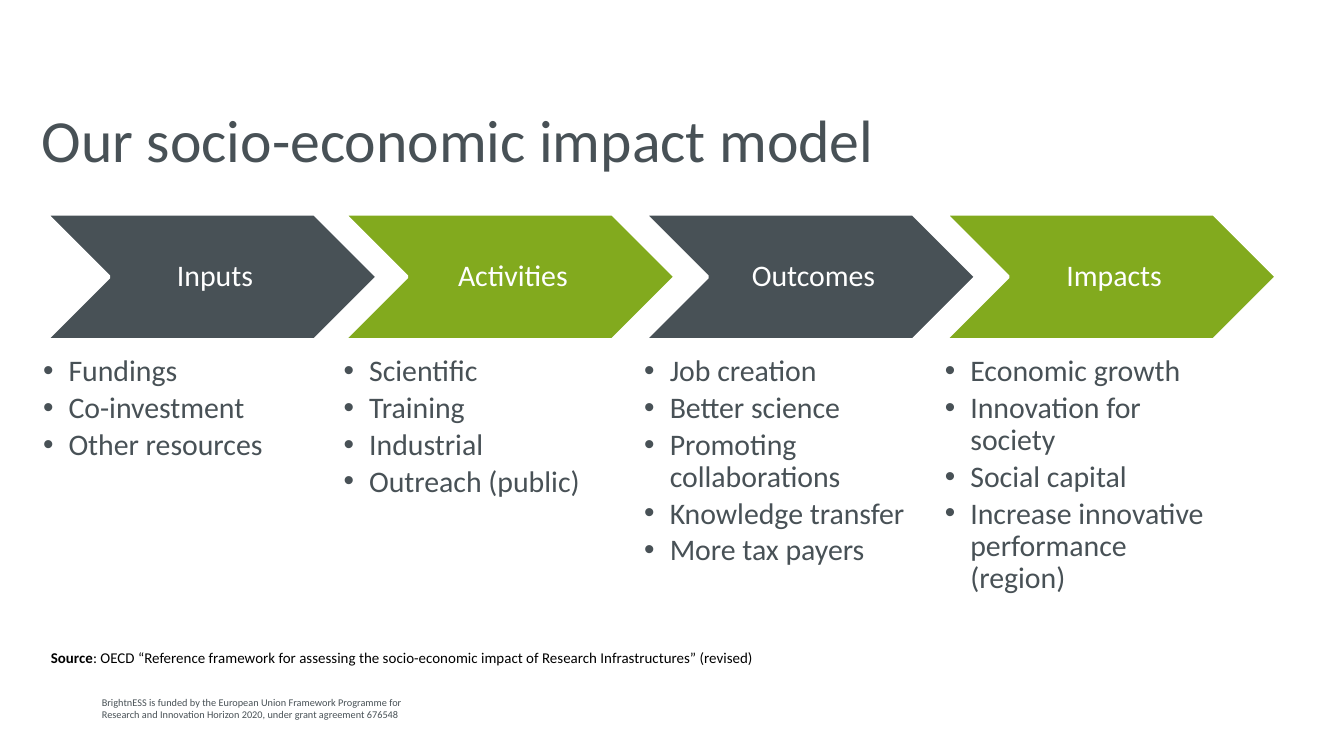
from lxml import etree
from pptx import Presentation
from pptx.dml.color import RGBColor
from pptx.enum.shapes import MSO_SHAPE
from pptx.enum.text import MSO_ANCHOR, MSO_AUTO_SIZE, PP_ALIGN
from pptx.oxml.ns import qn
from pptx.util import Inches, Pt

CHEVRON = MSO_SHAPE.CHEVRON
MIDDLE = MSO_ANCHOR.MIDDLE
LEFT, CENTER = PP_ALIGN.LEFT, PP_ALIGN.CENTER
FIT_SHAPE = MSO_AUTO_SIZE.SHAPE_TO_FIT_TEXT

COLORS = {"slate": "485156", "green": "82AA1E", "white": "FFFFFF", "black": "000000"}
FONT = "Calibri"

TITLE = "Our socio-economic impact model"
STAGES = [
    ("Inputs", "slate", ["Fundings", "Co-investment", "Other resources"]),
    ("Activities", "green", ["Scientific", "Training", "Industrial", "Outreach (public)"]),
    ("Outcomes", "slate", ["Job creation", "Better science", "Promoting collaborations",
                           "Knowledge transfer", "More tax payers"]),
    ("Impacts", "green", ["Economic growth", "Innovation for society", "Social capital",
                          "Increase innovative performance (region)"]),
]
SOURCE = ("Source", ": OECD “Reference framework for assessing the socio-economic impact "
          "of Research Infrastructures” (revised)")
FUNDING = ["BrightnESS is funded by the European Union Framework Programme for",
           "Research and Innovation Horizon 2020, under grant agreement 676548"]

SLIDE_WIDTH = 10
SLIDE_HEIGHT = SLIDE_WIDTH * 9 / 16
FIRST_LEFT, LAST_LEFT = 0.32, 7.03
STAGE_PITCH = (LAST_LEFT - FIRST_LEFT) / (len(STAGES) - 1)
FIRST_CHEVRON_LEFT = 0.34
CHEVRON_TOP, CHEVRON_WIDTH, CHEVRON_HEIGHT = 1.59, 2.47, 0.94
LIST_TOP, LIST_WIDTH, LIST_HEIGHT = 2.65, 1.98, 1.84
BULLET_INDENT = 0.19


def rgb(name):
    return RGBColor.from_string(COLORS[name])


def style_text(text_frame, size, color):
    for paragraph in text_frame.paragraphs:
        for run in paragraph.runs:
            run.font.name = FONT
            run.font.size = Pt(size)
            run.font.color.rgb = rgb(color)


def set_margins(text_frame, left, others):
    text_frame.margin_left = Inches(left)
    text_frame.margin_top = text_frame.margin_right = text_frame.margin_bottom = Inches(others)


def add_text(slide, box, lines, size, color, wrap=True):
    shape = slide.shapes.add_textbox(*map(Inches, box))
    text_frame = shape.text_frame
    text_frame.word_wrap = wrap
    text_frame.text = "\n".join(lines)
    style_text(text_frame, size, color)
    return text_frame


def add_bullet(paragraph):
    properties = paragraph._p.get_or_add_pPr()
    properties.set("marL", str(Inches(BULLET_INDENT)))
    properties.set("indent", str(-Inches(BULLET_INDENT)))
    etree.SubElement(properties, qn("a:buFont")).set("typeface", "Arial")
    etree.SubElement(properties, qn("a:buChar")).set("char", "•")
    paragraph.line_spacing = 0.9
    paragraph.space_after = Pt(2.4)


def add_chevron(slide, left, label, color):
    shape = slide.shapes.add_shape(CHEVRON, Inches(left), Inches(CHEVRON_TOP),
                                   Inches(CHEVRON_WIDTH), Inches(CHEVRON_HEIGHT))
    shape.shadow.inherit = False
    shape.fill.solid()
    shape.fill.fore_color.rgb = rgb(color)
    shape.line.color.rgb = rgb("white")
    shape.line.width = Pt(2)
    text_frame = shape.text_frame
    text_frame.text = label
    text_frame.vertical_anchor = MIDDLE
    set_margins(text_frame, 0.07, 0.02)
    paragraph = text_frame.paragraphs[0]
    paragraph.alignment = CENTER
    paragraph.line_spacing = 0.9
    style_text(text_frame, 16, "white")


def add_stage(slide, index, label, color, items):
    left = FIRST_LEFT + index * STAGE_PITCH
    add_chevron(slide, max(left, FIRST_CHEVRON_LEFT), label, color)
    text_frame = add_text(slide, (left, LIST_TOP, LIST_WIDTH, LIST_HEIGHT), items, 16, "slate")
    set_margins(text_frame, 0, 0)
    for paragraph in text_frame.paragraphs:
        add_bullet(paragraph)


def add_title(slide):
    title = slide.shapes.title
    title.left, title.top, title.width, title.height = map(Inches, (0.21, 0.56, 8.49, 0.94))
    title.text_frame.text = TITLE
    title.text_frame.vertical_anchor = MIDDLE
    title.text_frame.paragraphs[0].alignment = LEFT
    style_text(title.text_frame, 32, "slate")


def add_source(slide):
    heading, citation = SOURCE
    text_frame = add_text(slide, (0.28, 4.77, 5.49, 0.24), [heading], 8, "black", wrap=False)
    text_frame.paragraphs[0].runs[0].font.bold = True
    text_frame.paragraphs[0].add_run().text = citation
    style_text(text_frame, 8, "black")
    text_frame.vertical_anchor = MIDDLE
    text_frame.auto_size = FIT_SHAPE


def main():
    """Build the socio-economic impact model slide."""
    presentation = Presentation()
    presentation.slide_width = Inches(SLIDE_WIDTH)
    presentation.slide_height = Inches(SLIDE_HEIGHT)
    slide = presentation.slides.add_slide(presentation.slide_layouts[5])
    add_title(slide)
    for index, stage in enumerate(STAGES):
        add_stage(slide, index, *stage)
    add_source(slide)
    funding = add_text(slide, (0.66, 5.13, 2.74, 0.38), FUNDING, 5.5, "slate")
    funding.auto_size = FIT_SHAPE
    presentation.save("out.pptx")


if __name__ == "__main__":
    main()
